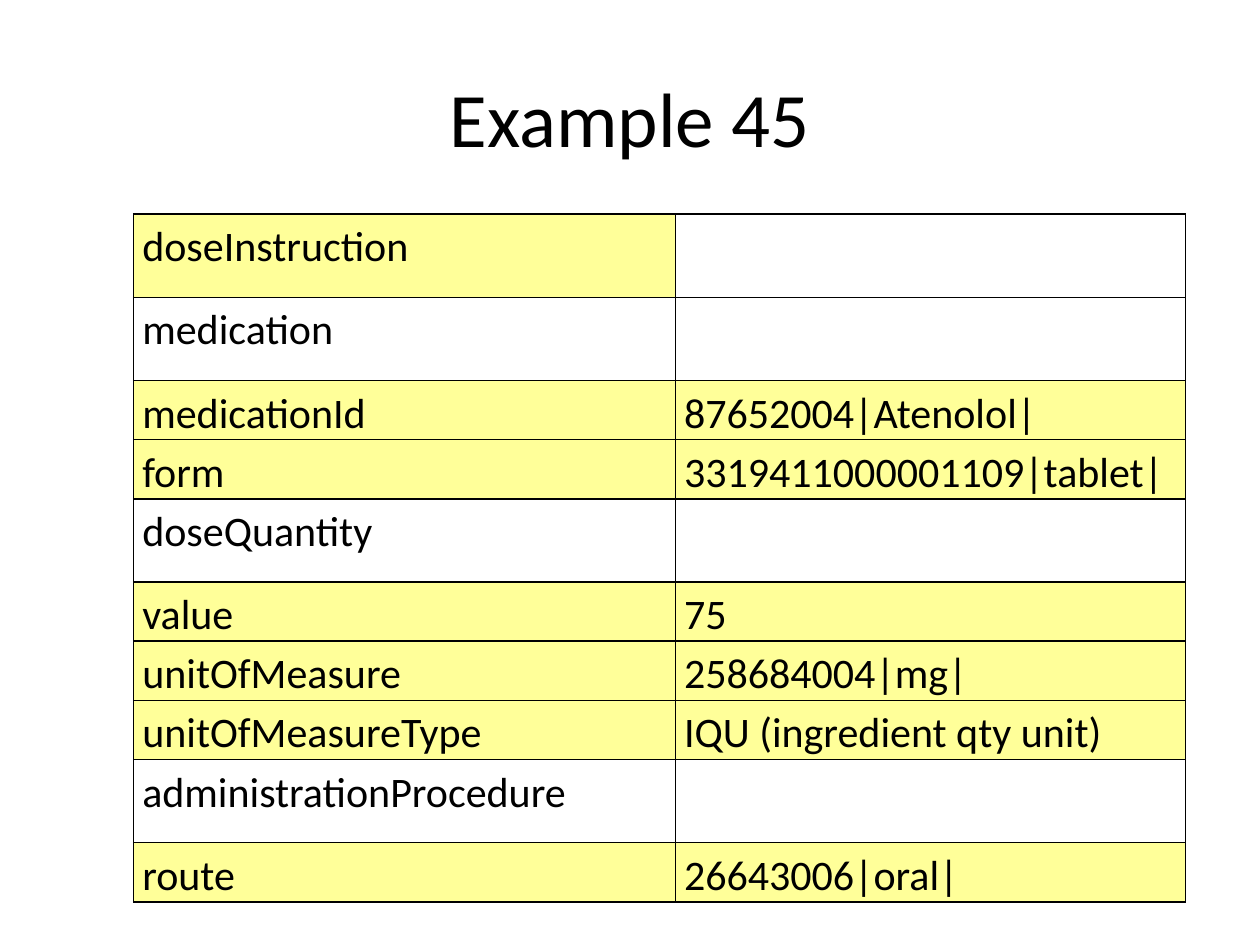
from lxml import etree
from pptx import Presentation
from pptx import util as u
from pptx.dml.color import RGBColor
from pptx.enum import text
from pptx.oxml.ns import qn

COLORS = {"ink": "000000", "filled": "FFFF99", "group": "FFFFFF"}

# Field, value, fill of the field cell; group rows have no value
ROWS = [
    ("doseInstruction", "", "filled"),
    ("medication", "", "group"),
    ("medicationId", "87652004|Atenolol|", "filled"),
    ("form", "3319411000001109|tablet|", "filled"),
    ("doseQuantity", "", "group"),
    ("value", "75", "filled"),
    ("unitOfMeasure", "258684004|mg|", "filled"),
    ("unitOfMeasureType", "IQU (ingredient qty unit)", "filled"),
    ("administrationProcedure", "", "group"),
    ("route", "26643006|oral|", "filled"),
]
COL_WIDTHS = (4.3, 4.05)
GROUP_HEIGHT, VALUE_HEIGHT = 0.66, 0.47


class SlideBuilder:
    font = "Calibri"

    def __init__(self, s):
        self.s = s

    def run(self, p, words, size):
        r = p.add_run()
        r.text = words
        r.font.name = self.font
        r.font.size = u.Pt(size)
        r.font.color.rgb = RGBColor.from_string(COLORS["ink"])

    def title(self, words, left, top, width, height):
        sp = self.s.shapes.add_textbox(*map(u.Inches, (left, top, width, height)))
        tf = sp.text_frame
        tf.word_wrap = True
        tf.vertical_anchor = text.MSO_ANCHOR.MIDDLE
        p = tf.paragraphs[0]
        p.alignment = text.PP_ALIGN.CENTER
        self.run(p, words, 44)

    def borders(self, cell):
        tc_pr = cell._tc.get_or_add_tcPr()
        for side in ("L", "R", "T", "B"):
            ln = etree.SubElement(tc_pr, qn(f"a:ln{side}"), w=str(u.Pt(1)))
            fill = etree.SubElement(ln, qn("a:solidFill"))
            etree.SubElement(fill, qn("a:srgbClr"), val=COLORS["ink"])

    def cell(self, cell, words, fill):
        self.borders(cell)
        if not words:
            cell.fill.background()
            return
        cell.fill.solid()
        cell.fill.fore_color.rgb = RGBColor.from_string(COLORS[fill])
        cell.margin_left = cell.margin_right = u.Inches(0.07)
        cell.margin_top = cell.margin_bottom = 0
        p = cell.text_frame.paragraphs[0]
        p.line_spacing = 1.15
        p.space_after = u.Pt(6)
        self.run(p, words, 24)

    def table(self, rows, left, top):
        heights = [VALUE_HEIGHT if value else GROUP_HEIGHT for _, value, _ in rows]
        box = map(u.Inches, (left, top, sum(COL_WIDTHS), sum(heights)))
        table = self.s.shapes.add_table(len(rows), len(COL_WIDTHS), *box).table
        table.first_row = table.horz_banding = False
        for column, width in zip(table.columns, COL_WIDTHS):
            column.width = u.Inches(width)
        for i, (field, value, fill) in enumerate(rows):
            table.rows[i].height = u.Inches(heights[i])
            self.cell(table.cell(i, 0), field, fill)
            self.cell(table.cell(i, 1), value, fill)


def main():
    prs = Presentation()
    prs.slide_width, prs.slide_height = u.Inches(10), u.Inches(7.5)
    slide = SlideBuilder(prs.slides.add_slide(prs.slide_layouts[6]))

    # Heading
    slide.title("Example 45", 0.5, 0.3, 9, 1.25)

    # Dose instruction fields
    slide.table(ROWS, 1.06, 1.7)

    prs.save("out.pptx")


if __name__ == "__main__":
    main()
